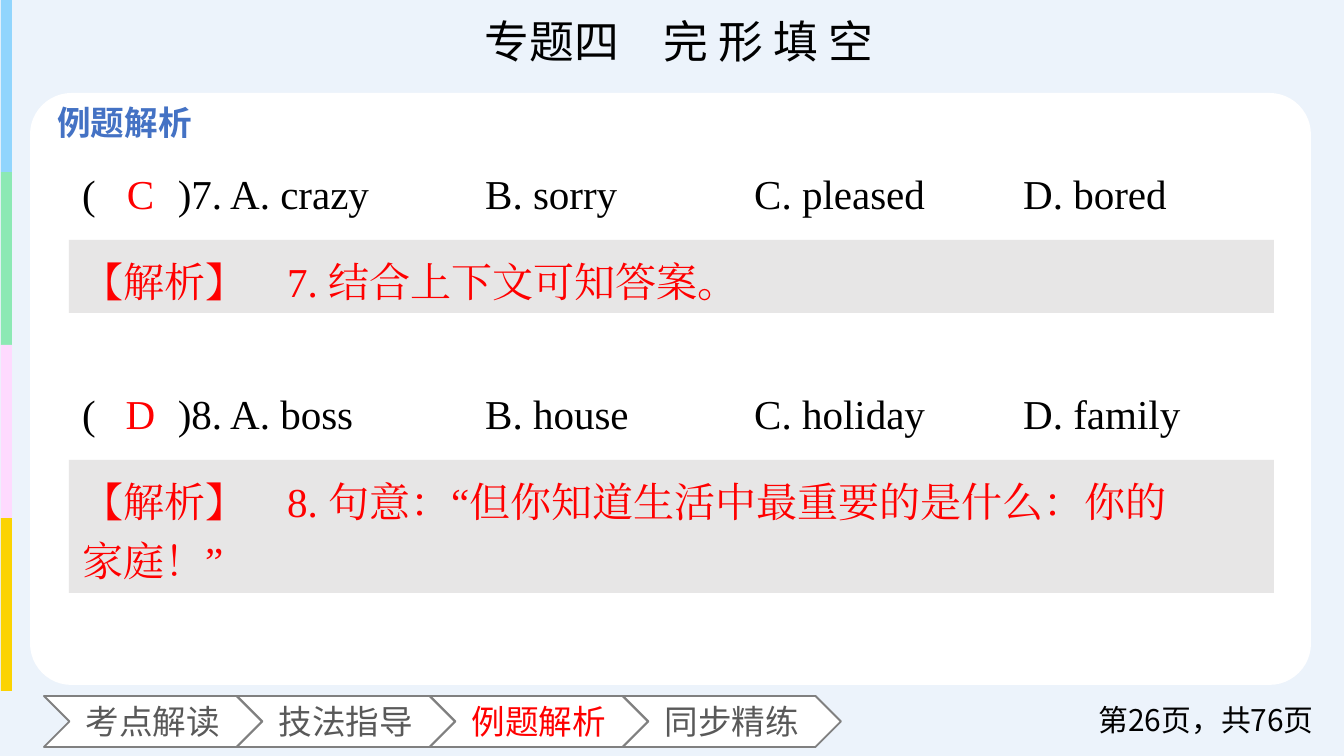
"""Build a cloze-exercise slide with two questions, explanations and section navigation."""
from lxml import etree
from pptx import Presentation
from pptx import util as u
from pptx.dml.color import RGBColor
from pptx.enum import shapes, text
from pptx.oxml.ns import qn

SANS, SERIF = "Noto Sans CJK SC", "Times New Roman"
BLACK, RED, GREY, BLUE, WHITE = "000000", "FF0000", "595959", "4472C4", "FFFFFF"
SHAPE, ALIGN = shapes.MSO_SHAPE, text.PP_ALIGN

TITLE = "专题四　完 形 填 空"
HEADING = "例题解析"
PAGE_NUMBER = "第26页，共76页"
STRIPES = ["91D5FD", "8CE9B4", "FEDAFE", "FBD302"]
SECTIONS = ["考点解读", "技法指导", "例题解析", "同步精练"]
QUESTIONS = [
    {"top": 152, "answer": "C", "note_height": 73,
     "choices": ["(　　)7. A. crazy", "B. sorry", "C. pleased", "D. bored"],
     "note": "【解析】　7. 结合上下文可知答案。"},
    {"top": 372, "answer": "D", "note_height": 133,
     "choices": ["(　　)8. A. boss", "B. house", "C. holiday", "D. family"],
     "note": "【解析】　8. 句意：“但你知道生活中最重要的是什么：你的\n家庭！”"},
]
CHOICE_TABS = [403, 672, 941]


def px(length):
    return u.Emu(round(length * 914400 / 134.4))


def color(value):
    return RGBColor.from_string(value)


def add_shape(page, kind, area, fill, line=None):
    shape = page.shapes.add_shape(kind, *map(px, area))
    shape.shadow.inherit = False
    shape.fill.solid()
    shape.fill.fore_color.rgb = color(fill)
    if line:
        shape.line.color.rgb = color(line)
        shape.line.width = u.Pt(1)
    else:
        shape.line.fill.background()
    return shape


def write(shape, words, size, ink, font=SANS, east=None, align=ALIGN.LEFT,
          bold=False, spacing=None, middle=False, tabs=()):
    frame = shape.text_frame
    frame.word_wrap = True
    frame.vertical_anchor = text.MSO_ANCHOR.MIDDLE if middle else text.MSO_ANCHOR.TOP
    frame.text = words
    for para in frame.paragraphs:
        para.alignment = align
        if spacing:
            para.line_spacing = spacing
        if tabs:
            stops = etree.SubElement(para._p.get_or_add_pPr(), qn("a:tabLst"))
            for stop in tabs:
                etree.SubElement(stops, qn("a:tab"), pos=str(px(stop)), algn="l")
        for span in para.runs:
            span.font.size = u.Pt(size)
            span.font.bold = bold
            span.font.name = font
            span.font.color.rgb = color(ink)
            etree.SubElement(span._r.get_or_add_rPr(), qn("a:ea"), typeface=east or font)
    return frame


def add_text(page, area, words, size, ink, **style):
    box = page.shapes.add_textbox(*map(px, area))
    write(box, words, size, ink, **style)


def add_question(page, question):
    top = question["top"]
    add_text(page, (69, top, 1205, 73), "\t".join(question["choices"]), 22, BLACK,
             font=SERIF, spacing=1.2, tabs=CHOICE_TABS)
    note = add_shape(page, SHAPE.RECTANGLE, (69, top + 88, 1205, question["note_height"]), "E7E6E6")
    write(note, question["note"], 22, RED, font=SERIF, spacing=1.2)
    add_text(page, (102, top + 10, 77, 63), question["answer"], 22, RED,
             font=SERIF, align=ALIGN.CENTER)


def main():
    deck = Presentation()
    deck.slide_width, deck.slide_height = px(1344), px(756)
    page = deck.slides.add_slide(deck.slide_layouts[6])

    add_shape(page, SHAPE.RECTANGLE, (0, 0, 1344, 756), "ECF3FB")
    add_text(page, (237, 7, 884, 67), TITLE, 24, BLACK, font=SERIF, east=SANS, align=ALIGN.CENTER)
    for index, fill in enumerate(STRIPES):
        add_shape(page, SHAPE.RECTANGLE, (1, 173 * index - 1, 11, 173), fill)
    panel = add_shape(page, SHAPE.ROUNDED_RECTANGLE, (30, 93, 1281, 592), WHITE)
    panel.adjustments[0] = 0.07
    add_text(page, (44, 95, 173, 54), HEADING, 18, BLUE, bold=True)

    for index, section in enumerate(SECTIONS):
        chevron = add_shape(page, SHAPE.CHEVRON, (44 + 193 * index, 696, 218, 51), WHITE, "808080")
        frame = write(chevron, section, 18, RED if section == HEADING else GREY,
                      align=ALIGN.CENTER, middle=True)
        frame.margin_left = frame.margin_right = 0
    add_text(page, (1054, 700, 273, 40), PAGE_NUMBER, 16, BLACK, align=ALIGN.RIGHT, middle=True)

    for question in QUESTIONS:
        add_question(page, question)
    deck.save("out.pptx")


if __name__ == "__main__":
    main()
